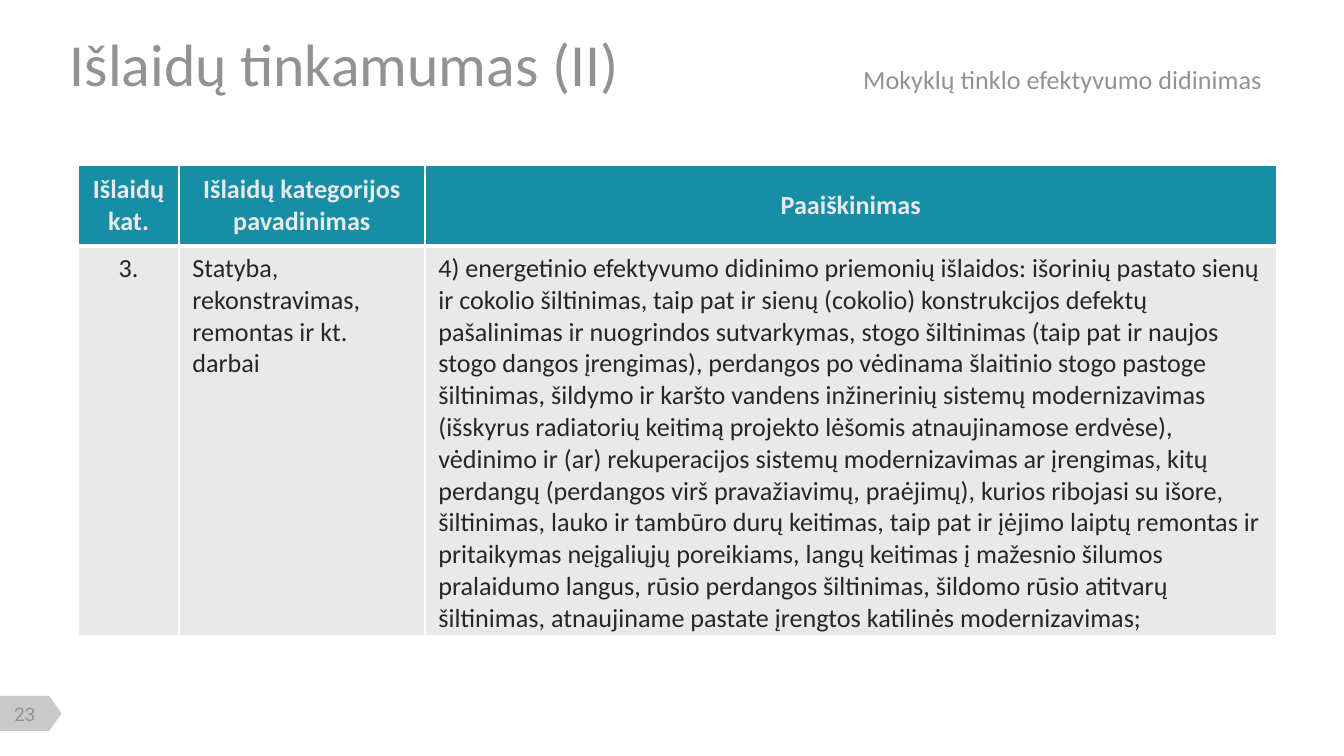
from lxml import etree
from pptx import Presentation
from pptx.dml.color import RGBColor
from pptx.enum.shapes import MSO_SHAPE
from pptx.enum.text import MSO_ANCHOR, PP_ALIGN
from pptx.oxml.ns import qn
from pptx.util import Cm, Pt

LEFT, MID, RIGHT = PP_ALIGN.LEFT, PP_ALIGN.CENTER, PP_ALIGN.RIGHT
TOP, CENTER = MSO_ANCHOR.TOP, MSO_ANCHOR.MIDDLE
TAG = MSO_SHAPE.FLOWCHART_OFFPAGE_CONNECTOR
GREY, DARK, PALE, TEAL = "929292", "262626", "E9E9E9", "168EA6"


def color(code):
    return RGBColor.from_string(code)


def write(frame, text, align, shade, form):
    para = frame.paragraphs[0]
    para.alignment = align
    run = para.add_run()
    run.text = text
    for key, value in form.items():
        setattr(run.font, key, value)
    run.font.color.rgb = color(shade)


deck = Presentation()
deck.slide_width, deck.slide_height = Cm(25.4), Cm(14.29)
slide = deck.slides.add_slide(deck.slide_layouts[6])
shapes = slide.shapes

tag = shapes.add_shape(TAG, Cm(0.25), Cm(12.9), Cm(0.66), Cm(1.17))
tag.rotation = 270
tag.shadow.inherit = False
tag.fill.solid()
tag.fill.fore_color.rgb = color("C9C9C9")
tag.line.fill.background()

body = {"name": "Calibri", "size": Pt(14), "bold": False}
head = {**body, "bold": True}
title = {**body, "size": Pt(32)}
page = {**body, "name": "Roboto", "size": Pt(10)}

labels = [
    ("23", (0.05, 13.28, 0.84, 0.43), MID, CENTER, 0, page),
    ("Išlaidų tinkamumas (II)", (1.07, 0.38, 11.23, 1.55), LEFT, TOP, 0.25, title),
    ("Mokyklų tinklo efektyvumo didinimas", (13.74, 1.07, 10.36, 1.07), RIGHT, TOP, 0.25, body),
]
for text, place, align, anchor, inset, form in labels:
    frame = shapes.add_textbox(*map(Cm, place)).text_frame
    pad = Cm(inset)
    layout = {
        "word_wrap": True,
        "vertical_anchor": anchor,
        "margin_left": pad,
        "margin_right": pad,
        "margin_top": pad // 2,
        "margin_bottom": pad // 2,
    }
    for key, value in layout.items():
        setattr(frame, key, value)
    write(frame, text, align, GREY, form)

detail = " ".join([
    "4) energetinio efektyvumo didinimo priemonių išlaidos: išorinių pastato sienų",
    "ir cokolio šiltinimas, taip pat ir sienų (cokolio) konstrukcijos defektų",
    "pašalinimas ir nuogrindos sutvarkymas, stogo šiltinimas (taip pat ir naujos",
    "stogo dangos įrengimas), perdangos po vėdinama šlaitinio stogo pastoge",
    "šiltinimas, šildymo ir karšto vandens inžinerinių sistemų modernizavimas",
    "(išskyrus radiatorių keitimą projekto lėšomis atnaujinamose erdvėse),",
    "vėdinimo ir (ar) rekuperacijos sistemų modernizavimas ar įrengimas, kitų",
    "perdangų (perdangos virš pravažiavimų, praėjimų), kurios ribojasi su išore,",
    "šiltinimas, lauko ir tambūro durų keitimas, taip pat ir įėjimo laiptų remontas ir",
    "pritaikymas neįgaliųjų poreikiams, langų keitimas į mažesnio šilumos",
    "pralaidumo langus, rūsio perdangos šiltinimas, šildomo rūsio atitvarų",
    "šiltinimas, atnaujiname pastate įrengtos katilinės modernizavimas;",
])
rows = [
    (1.52, TEAL, PALE, head, CENTER, 3, [
        ("Išlaidų kat.", MID),
        ("Išlaidų kategorijos pavadinimas", MID),
        ("Paaiškinimas", MID),
    ]),
    (7.37, PALE, DARK, body, TOP, 1, [
        ("3.", MID),
        ("Statyba, rekonstravimas, remontas ir kt. darbai", LEFT),
        (detail, LEFT),
    ]),
]
widths = [1.9, 4.65, 16.1]
table = shapes.add_table(
    len(rows), len(widths), Cm(1.48), Cm(3.13), Cm(sum(widths)), Cm(8.89)
).table
for col, width in zip(table.columns, widths):
    col.width = Cm(width)

for r, (height, fill, shade, form, anchor, base, cells) in enumerate(rows):
    table.rows[r].height = Cm(height)
    for c, (text, align) in enumerate(cells):
        cell = table.cell(r, c)
        cell.vertical_anchor = anchor
        props = cell._tc.get_or_add_tcPr()
        for side, width in {"L": 1, "R": 1, "T": 1, "B": base}.items():
            edge = etree.SubElement(props, qn(f"a:ln{side}"), w=str(Pt(width)))
            solid = etree.SubElement(edge, qn("a:solidFill"))
            etree.SubElement(solid, qn("a:srgbClr"), val="FFFFFF")
        cell.fill.solid()
        cell.fill.fore_color.rgb = color(fill)
        write(cell.text_frame, text, align, shade, form)

deck.save("out.pptx")
